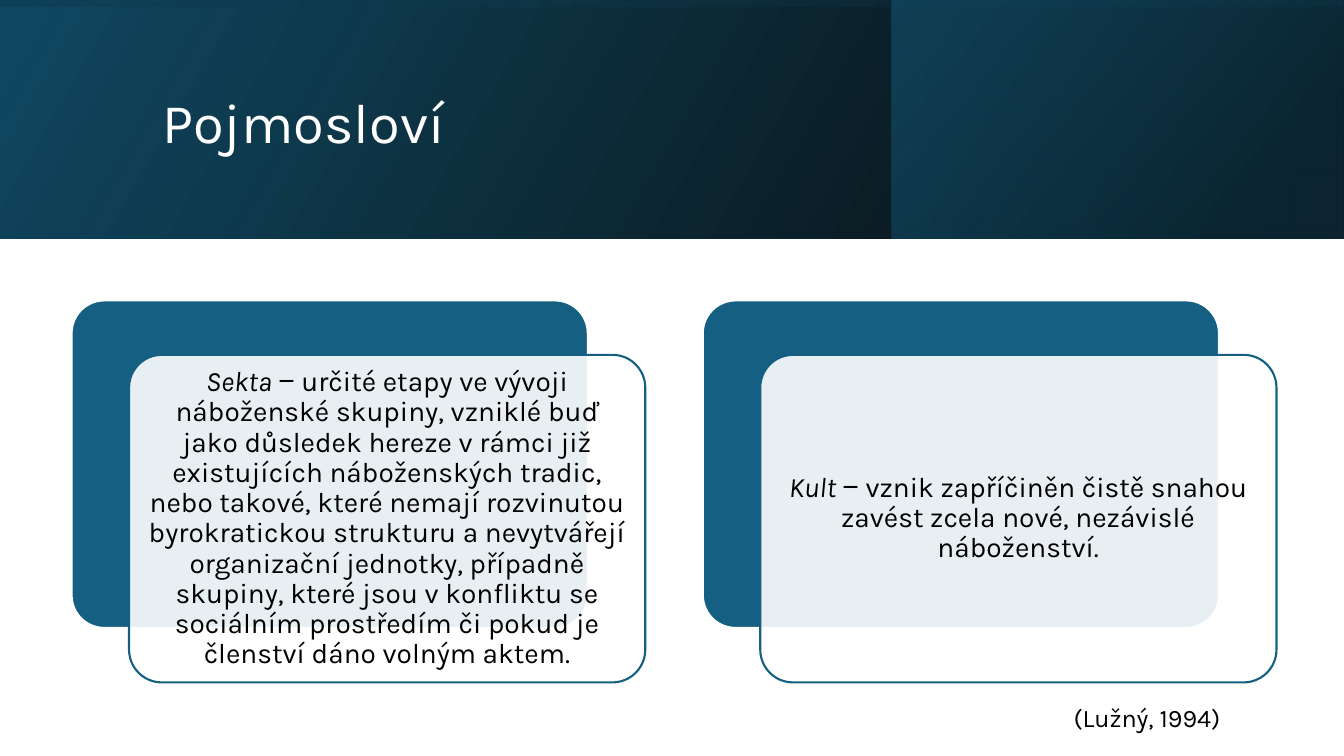
"""Build the slide Pojmosloví: a gradient banner above two layered cards."""
from lxml import etree
from pptx import Presentation
from pptx.dml.color import RGBColor
from pptx.enum.shapes import MSO_SHAPE
from pptx.enum.text import MSO_ANCHOR, PP_ALIGN
from pptx.oxml.ns import qn
from pptx.util import Inches, Pt

RECT, ROUND = MSO_SHAPE.RECTANGLE, MSO_SHAPE.ROUNDED_RECTANGLE
MIDDLE = MSO_ANCHOR.MIDDLE
LEFT, CENTER = PP_ALIGN.LEFT, PP_ALIGN.CENTER


def paint(color, code, alpha=100, node=None):
    """Set a colour from hex and, below 100, its opacity on the given node."""
    color.rgb = RGBColor.from_string(code)
    if alpha < 100:
        tint = node.find(".//" + qn("a:srgbClr"))
        etree.SubElement(tint, qn("a:alpha")).set("val", str(alpha * 1000))


def style(run, size, code="000000"):
    """Give a run its font, size and colour."""
    run.font.name = "Karla"
    run.font.size = Pt(size)
    paint(run.font.color, code)


deck = Presentation()
deck.slide_width, deck.slide_height = Inches(13.33), Inches(7.5)
slide = deck.slides.add_slide(deck.slide_layouts[5])
shapes = slide.shapes

bands = [
    (0, 0, 13.33, 2.37, 0, 330, [(0, "000000", 96), (100, "104862", 100)]),
    (8.84, 0, 4.48, 2.37, 0, 320, [(19, "0B3041", 68), (100, "156082", 48)]),
    (5.48, -5.48, 2.37, 13.33, 270, 350, [(23, "104862", 16), (99, "000000", 45)]),
]
for x, y, w, h, turn, angle, stops in bands:
    band = shapes.add_shape(RECT, Inches(x), Inches(y), Inches(w), Inches(h))
    band.shadow.inherit = False
    band.line.fill.background()
    band.rotation = turn
    props = band._element.spPr
    props.find(qn("a:xfrm")).set("flipH", "1")
    band.fill.gradient()
    band.fill.gradient_angle = 360 - angle
    nodes = props.findall(".//" + qn("a:gs"))
    for stop, node, (place, code, alpha) in zip(band.fill.gradient_stops, nodes, stops):
        stop.position = place / 100
        paint(stop.color, code, alpha, node)

title = shapes.title
shapes._spTree.append(title._element)
title.left, title.top = Inches(1.51), Inches(0.38)
title.width, title.height = Inches(10.63), Inches(1.72)
title.text_frame.text = "Pojmosloví"
title.text_frame.vertical_anchor = MIDDLE
head = title.text_frame.paragraphs[0]
head.alignment = LEFT
head.line_spacing = 0.9
style(head.runs[0], 40, "FFFFFF")

terms = [
    ("Sekta", " ‒ určité etapy ve vývoji náboženské skupiny, vzniklé buď jako "
     "důsledek hereze v rámci již existujících náboženských tradic, nebo takové, "
     "které nemají rozvinutou byrokratickou strukturu a nevytvářejí organizační "
     "jednotky, případně skupiny, které jsou v konfliktu se sociálním prostředím "
     "či pokud je členství dáno volným aktem."),
    ("Kult", " ‒ vznik zapříčiněn čistě snahou zavést zcela nové, nezávislé "
     "náboženství."),
]
layers = [(0, 0, "156082", 100, "FFFFFF"), (0.57, 0.54, "FFFFFF", 90, "156082")]
for col, (term, text) in enumerate(terms):
    for dx, dy, code, alpha, edge in layers:
        card = shapes.add_shape(ROUND, Inches(0.71 + col * 6.26 + dx),
                                Inches(2.98 + dy), Inches(5.12), Inches(3.25))
        card.adjustments[0] = 0.1
        card.shadow.inherit = False
        card.fill.solid()
        paint(card.fill.fore_color, code, alpha, card._element.spPr)
        card.line.width = Pt(1.5)
        paint(card.line.color, edge)
    frame = card.text_frame
    frame.word_wrap = True
    frame.vertical_anchor = MIDDLE
    frame.margin_left = frame.margin_right = Inches(0.08)
    frame.margin_top = frame.margin_bottom = Inches(0.08)
    para = frame.paragraphs[0]
    para.alignment = CENTER
    para.line_spacing = 0.9
    para.space_after = Pt(7)
    for part in (term, text):
        run = para.add_run()
        run.text = part
        run.font.italic = part == term
        style(run, 20)

cite = shapes.add_textbox(Inches(10.55), Inches(6.92), Inches(2.11), Inches(0.4))
cite.text_frame.word_wrap = True
cite.text_frame.text = "(Lužný, 1994)"
style(cite.text_frame.paragraphs[0].runs[0], 18)

deck.save("out.pptx")
